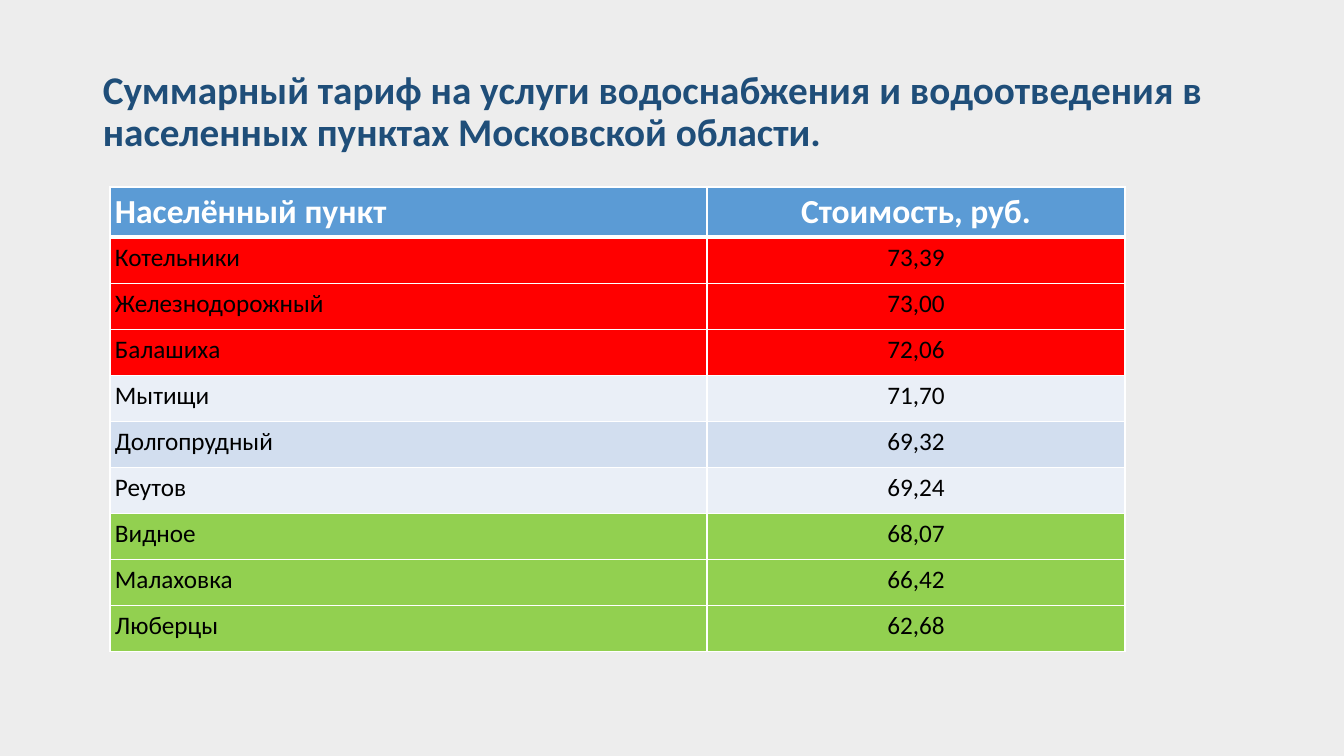
from lxml.etree import SubElement
from pptx import Presentation
from pptx.dml.color import RGBColor
from pptx.enum.text import MSO_ANCHOR, PP_ALIGN
from pptx.oxml.ns import qn
from pptx.util import Emu, Pt

PAPER = RGBColor(0xED, 0xED, 0xED)
NAVY = RGBColor(0x1F, 0x4E, 0x79)
BLUE = RGBColor(0x5B, 0x9B, 0xD5)
RED = RGBColor(0xFF, 0x00, 0x00)
PALE = RGBColor(0xEA, 0xEF, 0xF7)
MIST = RGBColor(0xD2, 0xDE, 0xEF)
GREEN = RGBColor(0x92, 0xD0, 0x50)
WHITE = RGBColor(0xFF, 0xFF, 0xFF)
BLACK = RGBColor(0x00, 0x00, 0x00)

TITLE = "Суммарный тариф на услуги водоснабжения и водоотведения в населенных пунктах Московской области."
HEAD = ("Населённый пункт", "Стоимость, руб.", BLUE)
TOWNS = [
    ("Котельники", "73,39", RED),
    ("Железнодорожный", "73,00", RED),
    ("Балашиха", "72,06", RED),
    ("Мытищи", "71,70", PALE),
    ("Долгопрудный", "69,32", MIST),
    ("Реутов", "69,24", PALE),
    ("Видное", "68,07", GREEN),
    ("Малаховка", "66,42", GREEN),
    ("Люберцы", "62,68", GREEN),
]


def px(count):
    return Emu(round(count * 914400 / 100.8))


def apply(target, values):
    for name, value in values.items():
        setattr(target, name, value)


class Deck:
    face = "Calibri"
    aligns = (PP_ALIGN.LEFT, PP_ALIGN.CENTER)

    def __init__(self, width, height):
        self.show = Presentation()
        apply(self.show, {"slide_width": px(width), "slide_height": px(height)})
        self.slide = self.show.slides.add_slide(self.show.slide_layouts[6])
        fill = self.slide.background.fill
        fill.solid()
        fill.fore_color.rgb = PAPER

    def label(self, frame, text, size, color, bold, **layout):
        para = frame.paragraphs[0]
        apply(para, layout)
        run = para.add_run()
        run.text = text
        apply(run.font, {"name": self.face, "size": Pt(size), "bold": bold})
        run.font.color.rgb = color

    def title(self, text, *box):
        frame = self.slide.shapes.add_textbox(*map(px, box)).text_frame
        apply(frame, {"word_wrap": True, "vertical_anchor": MSO_ANCHOR.MIDDLE})
        self.label(frame, text, 28, NAVY, True, line_spacing=0.9)

    def border(self, cell, widths):
        props = cell._tc.get_or_add_tcPr()
        for side, width in zip("LRTB", widths):
            line = SubElement(props, qn(f"a:ln{side}"), w=str(Pt(width)))
            SubElement(SubElement(line, qn("a:solidFill")), qn("a:srgbClr"), val=str(WHITE))

    def table(self, rows, left, top, widths, heights):
        box = (left, top, sum(widths), sum(heights))
        grid = self.slide.shapes.add_table(len(rows), len(widths), *map(px, box)).table
        apply(grid, {"first_row": False, "horz_banding": False})
        for column, width in zip(grid.columns, widths):
            column.width = px(width)
        for row, height in zip(grid.rows, heights):
            row.height = px(height)
        for index, (*texts, color) in enumerate(rows):
            head = index == 0
            style = (24, WHITE, True) if head else (18, BLACK, False)
            edges = (1, 1, 3 if index == 1 else 1, 3 if head else 1)
            for col, text in enumerate(texts):
                cell = grid.cell(index, col)
                sides = ("left", "right", "top", "bottom")
                apply(cell, {f"margin_{side}": px(5) for side in sides})
                self.border(cell, edges)
                cell.fill.solid()
                cell.fill.fore_color.rgb = color
                self.label(cell.text_frame, text, *style, alignment=self.aligns[col])


def main():
    deck = Deck(1344, 756)
    deck.title(TITLE, 93, 40, 1159, 146)
    deck.table([HEAD, *TOWNS], 110, 187, (597, 418), [50] + [46] * len(TOWNS))
    deck.show.save("out.pptx")


if __name__ == "__main__":
    main()
